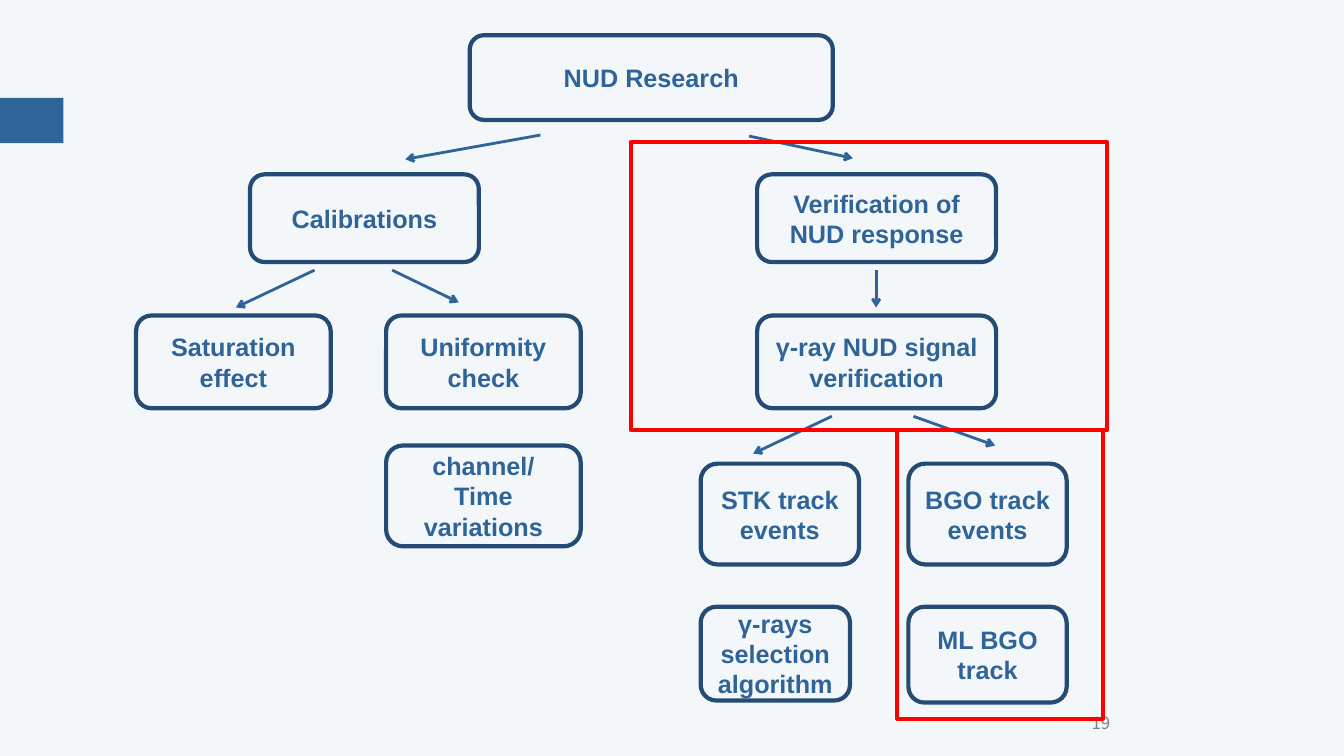
from lxml import etree
from pptx import Presentation
from pptx.dml.color import RGBColor
from pptx.enum.shapes import MSO_CONNECTOR, MSO_SHAPE
from pptx.enum.text import MSO_ANCHOR, PP_ALIGN
from pptx.oxml.ns import qn
from pptx.util import Pt

PX = 9144  # EMU per px, 100 px to the inch
RECTANGLE, ROUNDED = MSO_SHAPE.RECTANGLE, MSO_SHAPE.ROUNDED_RECTANGLE
STRAIGHT = MSO_CONNECTOR.STRAIGHT
CENTER, MIDDLE = PP_ALIGN.CENTER, MSO_ANCHOR.MIDDLE
BLUE, NAVY, RED, GRAY, PALE = "2F6499", "234B73", "FF0000", "808080", "F4F7FA"


def color(value):
    return RGBColor.from_string(value)


def emu(*lengths):
    return [length * PX for length in lengths]


def write_text(shape, text, size=18, font="Arial", fill=BLUE, bold=True, spacing=None):
    frame = shape.text_frame
    frame.word_wrap = True
    frame.vertical_anchor = MIDDLE
    frame.text = text
    for paragraph in frame.paragraphs:
        paragraph.alignment = CENTER
        paragraph.line_spacing = spacing
        paragraph.font.size = Pt(size)
        paragraph.font.name = font
        paragraph.font.bold = bold
        paragraph.font.color.rgb = color(fill)


def add_box(slide, kind, box, fill=None, line=None):
    shape = slide.shapes.add_shape(kind, *emu(*box))
    shape.shadow.inherit = False
    if fill:
        shape.fill.solid()
        shape.fill.fore_color.rgb = color(fill)
    else:
        shape.fill.background()
    if line:
        shape.line.color.rgb = color(line)
        shape.line.width = Pt(3)
    else:
        shape.line.fill.background()
    return shape


def add_node(slide, text, *box):
    write_text(add_box(slide, ROUNDED, box, line=NAVY), text)


def add_arrow(slide, *ends):
    arrow = slide.shapes.add_connector(STRAIGHT, *emu(*ends))
    arrow.line.color.rgb = color(BLUE)
    arrow.line.width = Pt(2)
    line = arrow.line._get_or_add_ln()
    etree.SubElement(line, qn("a:tailEnd"), type="arrow")
    etree.SubElement(arrow._element.spPr, qn("a:effectLst"))


def add_root(slide, left, top, width, height):
    add_node(slide, "NUD Research", left, top, width, height)
    bottom = top + height
    add_arrow(slide, left + 70, bottom + 15, left - 64, bottom + 39)
    add_arrow(slide, left + 277, bottom + 16, left + 380, bottom + 38)


def add_calibrations(slide, left, top, width):
    child = 193
    right = left + width - child
    add_node(slide, "Calibrations", left + 113, top, 227, 87)
    add_arrow(slide, left + 177, top + 95, left + 99, top + 132)
    add_arrow(slide, left + 254, top + 95, left + 320, top + 127)
    add_node(slide, "Saturation effect", left, top + 140, child, 92)
    add_node(slide, "Uniformity check", right, top + 140, child, 92)
    add_node(slide, "channel/\nTime variations", right, top + 269, child, 100)


def add_verification(slide, left, top, width):
    # Main chain
    chain, chain_width = left + 56, 237
    middle = chain + chain_width // 2
    add_node(slide, "Verification of NUD response", chain, top, chain_width, 87)
    add_arrow(slide, middle, top + 95, middle, top + 132)
    add_node(slide, "γ-ray NUD signal verification", chain, top + 140, chain_width, 92)

    # Track branches
    add_arrow(slide, left + 130, top + 240, left + 52, top + 277)
    add_arrow(slide, left + 211, top + 240, left + 292, top + 269)
    child = 157
    right = left + width - child
    add_node(slide, "STK track\nevents", left, top + 287, child, 100)
    add_node(slide, "BGO track events", right, top + 287, child, 100)
    add_node(slide, "γ-rays selection algorithm", left, top + 429, 148, 93)
    add_node(slide, "ML BGO track", right, top + 429, child, 95)


def add_highlights(slide, left, top, width, height):
    add_box(slide, RECTANGLE, (left, top, width, height), line=RED)
    add_box(slide, RECTANGLE, (left + 264, top + height, 204, height), line=RED)


def add_page_number(slide, *box):
    number = slide.shapes.add_textbox(*emu(*box))
    write_text(number, "19", size=12, font="Noto Sans CJK SC", fill=GRAY,
               bold=False, spacing=1.2)


def main():
    presentation = Presentation()
    presentation.slide_width, presentation.slide_height = emu(1333, 750)
    slide = presentation.slides.add_slide(presentation.slide_layouts[6])
    slide.background.fill.solid()
    slide.background.fill.fore_color.rgb = color(PALE)

    # Side accent and page number
    add_box(slide, RECTANGLE, (0, 97, 63, 45), fill=BLUE)
    add_page_number(slide, 942, 695, 300, 40)

    # Research tree
    add_root(slide, 466, 35, 360, 84)
    add_calibrations(slide, 135, 173, 441)
    add_verification(slide, 695, 173, 363)
    add_highlights(slide, 626, 141, 472, 286)

    presentation.save("out.pptx")


if __name__ == "__main__":
    main()
